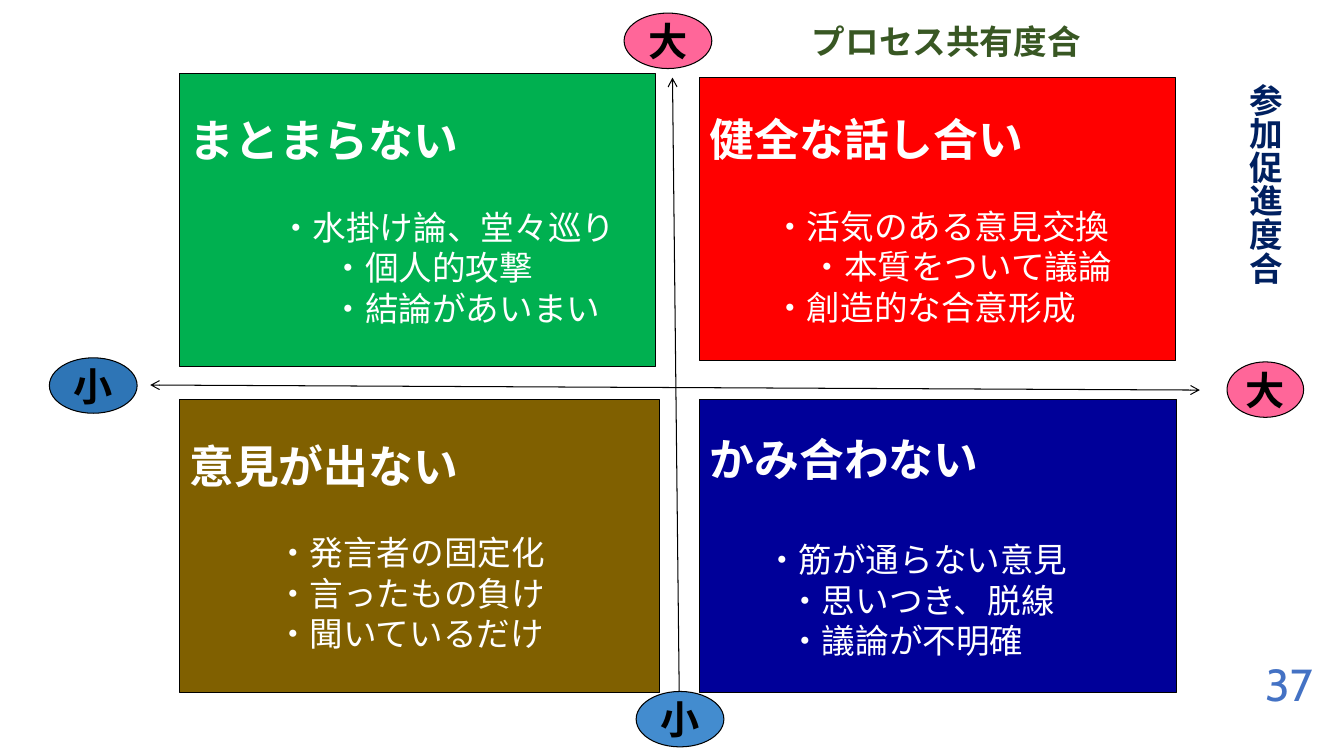
from pptx import Presentation
from pptx.dml.color import RGBColor
from pptx.enum.shapes import MSO_CONNECTOR, MSO_SHAPE
from pptx.enum.text import MSO_ANCHOR, PP_ALIGN
from pptx.oxml.ns import qn
from pptx.util import Inches, Pt
from lxml import etree

RECTANGLE, OVAL = MSO_SHAPE.RECTANGLE, MSO_SHAPE.OVAL
STRAIGHT = MSO_CONNECTOR.STRAIGHT
MIDDLE = MSO_ANCHOR.MIDDLE
LEFT, CENTER, RIGHT = PP_ALIGN.LEFT, PP_ALIGN.CENTER, PP_ALIGN.RIGHT

JAPANESE, NUMERAL = "Noto Sans CJK JP", "Cabin"
LINE_HEIGHT = 1.2
COLORS = {
    "black": "000000", "white": "FFFFFF", "green": "00B050",
    "brown": "806000", "red": "FF0000", "navy": "000099",
    "pink": "FF6699", "blue": "2E75B6", "light_blue": "438CCF",
    "process": "385723", "participation": "002060", "number": "4472C4",
}

QUADRANTS = [
    ((1.78, 0.73, 4.72, 2.91), "green", "まとまらない", 24,
     [("水掛け論、堂々巡り", 0.89), ("個人的攻撃", 1.41), ("結論があいまい", 1.41)]),
    ((1.78, 3.96, 4.76, 2.91), "brown", "意見が出ない", 24,
     [("発言者の固定化", 0.86), ("言ったもの負け", 0.86), ("聞いているだけ", 0.86)]),
    ((6.94, 0.77, 4.72, 2.81), "red", "健全な話し合い", 24,
     [("活気のある意見交換", 0.63), ("本質をついて議論", 1), ("創造的な合意形成", 0.63)]),
    ((6.94, 3.96, 4.73, 2.91), "navy", "かみ合わない", 32,
     [("筋が通らない意見", 0.55), ("思いつき、脱線", 0.78), ("議論が不明確", 0.78)]),
]
AXES = [((6.67, 0.77), (6.74, 7.15)), ((1.49, 3.82), (11.9, 3.87))]
AXIS_ENDS = [
    ((6.19, 0.13, 0.87, 0.55), "pink", "大"),
    ((12.17, 3.59, 0.76, 0.55), "pink", "大"),
    ((0.49, 3.55, 0.87, 0.55), "blue", "小"),
    ((6.31, 6.86, 0.87, 0.55), "light_blue", "小"),
]


def color(name):
    return RGBColor.from_string(COLORS[name])


def write(para, text, size, ink, bold=False, align=LEFT, font=JAPANESE):
    para.alignment = align
    span = para.add_run()
    span.text = text
    para.font.name, para.font.size, para.font.bold = font, Pt(size), bold
    para.font.color.rgb = color(ink)
    properties = span.font
    properties.name, properties.size, properties.bold = font, Pt(size), bold
    properties.color.rgb = color(ink)
    east_asian = etree.SubElement(span._r.get_or_add_rPr(), qn("a:ea"))
    east_asian.set("typeface", font)


def add_axis(page, start, end):
    axis = page.shapes.add_connector(
        STRAIGHT, *(Inches(value) for value in (*start, *end)))
    axis.line.color.rgb = color("black")
    axis.line.width = Pt(0.75)
    line = axis.line._get_or_add_ln()
    for tag in ("a:headEnd", "a:tailEnd"):
        etree.SubElement(line, qn(tag)).set("type", "arrow")
    etree.SubElement(axis._element.spPr, qn("a:effectLst"))


def add_outlined(page, kind, box, fill):
    shape = page.shapes.add_shape(kind, *(Inches(value) for value in box))
    shape.shadow.inherit = False
    shape.fill.solid()
    shape.fill.fore_color.rgb = color(fill)
    shape.line.color.rgb = color("black")
    shape.line.width = Pt(0.75)
    shape.text_frame.vertical_anchor = MIDDLE
    shape.text_frame.word_wrap = False
    return shape.text_frame


def add_quadrant(page, box, fill, heading, gap, points):
    frame = add_outlined(page, RECTANGLE, box, fill)
    frame.word_wrap = True
    write(frame.paragraphs[0], heading, 32, "white", bold=True)
    for index, (point, indent) in enumerate(points):
        para = frame.add_paragraph()
        write(para, "・" + point, 24, "white")
        para._p.get_or_add_pPr().set("marL", str(Inches(indent)))
        if index == 0:
            para.space_before = Pt(gap * LINE_HEIGHT)


def add_axis_end(page, box, fill, label):
    frame = add_outlined(page, OVAL, box, fill)
    write(frame.paragraphs[0], label, 28, "black", bold=True, align=CENTER)


def add_label(page, box, text, size, ink, vertical=False, **style):
    frame = page.shapes.add_textbox(*(Inches(value) for value in box)).text_frame
    frame.word_wrap = False
    frame.vertical_anchor = MIDDLE
    if vertical:
        frame._txBody.bodyPr.set("vert", "eaVert")
    write(frame.paragraphs[0], text, size, ink, **style)
    return frame


def main():
    deck = Presentation()
    deck.slide_width, deck.slide_height = Inches(13.33), Inches(7.5)
    page = deck.slides.add_slide(deck.slide_layouts[6])
    for axis in AXES:
        add_axis(page, *axis)
    for quadrant in QUADRANTS:
        add_quadrant(page, *quadrant)
    for axis_end in AXIS_ENDS:
        add_axis_end(page, *axis_end)
    add_label(page, (7.69, 0.13, 3.39, 0.55), "プロセス共有度合", 24, "process",
              bold=True, align=CENTER)
    add_label(page, (12.33, 0.73, 0.43, 2.6), "参加促進度合", 24, "participation",
              vertical=True, bold=True, align=CENTER)
    number = add_label(page, (12.17, 6.48, 0.95, 0.61), "37", 32, "number",
                       align=RIGHT, font=NUMERAL)
    number.word_wrap = True
    deck.save("out.pptx")


if __name__ == "__main__":
    main()
